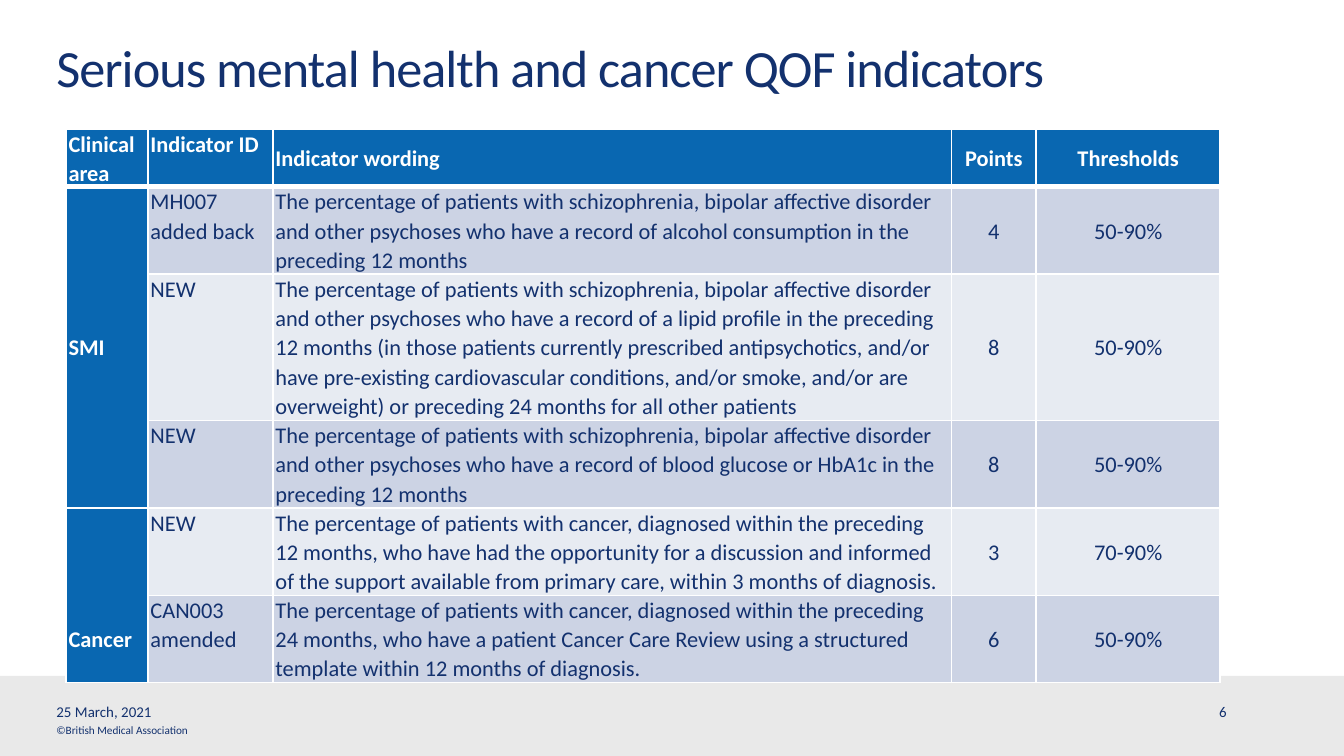
import pptx
import pptx.dml.color
import pptx.enum.shapes
import pptx.enum.text
import pptx.oxml
import pptx.oxml.ns
import pptx.util
from pptx.util import Inches

COLORS = {
    "navy": "13316E",
    "blue": "0967B1",
    "white": "FFFFFF",
    "footer": "E9E9E9",
    "band_dark": "CCD3E4",
    "band_light": "E7EBF2",
}
FONT = "Calibri"
ALIGN = pptx.enum.text.PP_ALIGN
ANCHOR = pptx.enum.text.MSO_ANCHOR

COLUMN_WIDTHS = [0.61, 0.93, 5.05, 0.63, 1.37]
ROW_HEIGHTS = [0.43, 0.65, 1.09, 0.65, 0.65, 0.65]
COLUMN_ANCHORS = [ANCHOR.TOP, ANCHOR.TOP] + [ANCHOR.MIDDLE] * 3
COLUMN_ALIGNS = [ALIGN.LEFT] * 3 + [ALIGN.CENTER] * 2

SMI_PATIENTS = ("The percentage of patients with schizophrenia, bipolar affective disorder "
                "and other psychoses who have a record of ")
CANCER_PATIENTS = "The percentage of patients with cancer, diagnosed within the preceding "
ROWS = [
    ["Clinical\narea", "Indicator ID", "Indicator wording", "Points", "Thresholds"],
    ["SMI", "MH007 added back",
     SMI_PATIENTS + "alcohol consumption in the preceding 12 months", "4", "50-90%"],
    ["", "NEW",
     SMI_PATIENTS + "a lipid profile in the preceding 12 months (in those patients currently "
     "prescribed antipsychotics, and/or have pre-existing cardiovascular conditions, and/or "
     "smoke, and/or are overweight) or preceding 24 months for all other patients",
     "8", "50-90%"],
    ["", "NEW",
     SMI_PATIENTS + "blood glucose or HbA1c in the preceding 12 months", "8", "50-90%"],
    ["Cancer", "NEW",
     CANCER_PATIENTS + "12 months, who have had the opportunity for a discussion and informed "
     "of the support available from primary care, within 3 months of diagnosis.",
     "3", "70-90%"],
    ["", "CAN003 amended",
     CANCER_PATIENTS + "24 months, who have a patient Cancer Care Review using a structured "
     "template within 12 months of diagnosis.", "6", "50-90%"],
]


def rgb(name):
    return pptx.dml.color.RGBColor.from_string(COLORS[name])


def format_runs(frame, size, color, bold=False):
    for paragraph in frame.paragraphs:
        for run in paragraph.runs:
            run.font.name = FONT
            run.font.size = pptx.util.Pt(size)
            run.font.bold = bold
            run.font.color.rgb = rgb(color)


def clear_margins(frame):
    frame.margin_left = frame.margin_right = frame.margin_top = frame.margin_bottom = 0


def add_footer_band(slide):
    band = slide.shapes.add_shape(
        pptx.enum.shapes.MSO_SHAPE.RECTANGLE, 0, Inches(5.03), Inches(10), Inches(0.6))
    band.shadow.inherit = False
    band.fill.solid()
    band.fill.fore_color.rgb = rgb("footer")
    band.line.fill.background()


def add_footer_text(slide, text, left, top, width, height, size):
    box = slide.shapes.add_textbox(Inches(left), Inches(top), Inches(width), Inches(height))
    frame = box.text_frame
    frame.word_wrap = True
    frame.vertical_anchor = ANCHOR.MIDDLE
    clear_margins(frame)
    frame.text = text
    format_runs(frame, size, "navy")


def set_title(slide, text):
    title = slide.shapes.title
    title.left, title.top = Inches(0.42), Inches(0.26)
    title.width, title.height = Inches(7.73), Inches(0.54)
    frame = title.text_frame
    frame.auto_size = pptx.enum.text.MSO_AUTO_SIZE.NONE
    frame.vertical_anchor = ANCHOR.TOP
    clear_margins(frame)
    frame.text = text
    heading = frame.paragraphs[0]
    heading.alignment = ALIGN.LEFT
    heading.line_spacing = pptx.util.Pt(34)
    format_runs(frame, 28, "navy")
    heading.runs[0].font._element.set("spc", "-50")


def set_borders(cell, top, bottom):
    """Draw white cell borders; top and bottom are widths in points."""
    properties = cell._tc.get_or_add_tcPr()
    for side, width in (("L", 1), ("R", 1), ("T", top), ("B", bottom)):
        properties.append(pptx.oxml.parse_xml(
            f'<a:ln{side} {pptx.oxml.ns.nsdecls("a")} w="{pptx.util.Pt(width)}">'
            f'<a:solidFill><a:srgbClr val="{COLORS["white"]}"/></a:solidFill></a:ln{side}>'))


def fill_cell(cell, text, row, column):
    is_heading = row == 0 or column == 0
    set_borders(cell, top=3 if row == 1 else 1, bottom=3 if row == 0 else 1)
    cell.fill.solid()
    band = "band_dark" if row % 2 else "band_light"
    cell.fill.fore_color.rgb = rgb("blue" if is_heading else band)
    cell.margin_left = cell.margin_right = Inches(0.02)
    cell.margin_top = cell.margin_bottom = 0
    cell.vertical_anchor = COLUMN_ANCHORS[column]
    cell.text_frame.text = text
    for paragraph in cell.text_frame.paragraphs:
        paragraph.alignment = COLUMN_ALIGNS[column]
        paragraph.line_spacing = 1.07
        paragraph.font.size = pptx.util.Pt(12)
    format_runs(cell.text_frame, 12, "white" if is_heading else "navy", is_heading)


def add_indicator_table(slide):
    table = slide.shapes.add_table(
        len(ROWS), len(COLUMN_WIDTHS), Inches(0.49), Inches(0.96),
        Inches(sum(COLUMN_WIDTHS)), Inches(sum(ROW_HEIGHTS))).table
    for column, width in zip(table.columns, COLUMN_WIDTHS):
        column.width = Inches(width)
    for row, height in zip(table.rows, ROW_HEIGHTS):
        row.height = Inches(height)
    for row, texts in enumerate(ROWS):
        for column, text in enumerate(texts):
            fill_cell(table.cell(row, column), text, row, column)

    smi, cancer = table.cell(1, 0), table.cell(4, 0)
    smi.merge(table.cell(3, 0))
    smi.vertical_anchor = ANCHOR.MIDDLE
    cancer.merge(table.cell(5, 0))
    cancer.vertical_anchor = ANCHOR.BOTTOM
    cancer.margin_bottom = Inches(0.22)


def main():
    presentation = pptx.Presentation()
    presentation.slide_width = Inches(10)
    presentation.slide_height = presentation.slide_width * 9 // 16
    slide = presentation.slides.add_slide(presentation.slide_layouts[5])
    add_footer_band(slide)
    add_footer_text(slide, "©British Medical Association", 0.42, 5.38, 2.07, 0.1, 6)
    set_title(slide, "Serious mental health and cancer QOF indicators")
    add_indicator_table(slide)
    add_footer_text(slide, "25 March, 2021", 0.42, 5.23, 3.17, 0.13, 8)
    add_footer_text(slide, "6", 9.07, 5.23, 0.28, 0.13, 8)
    presentation.save("out.pptx")


if __name__ == "__main__":
    main()
